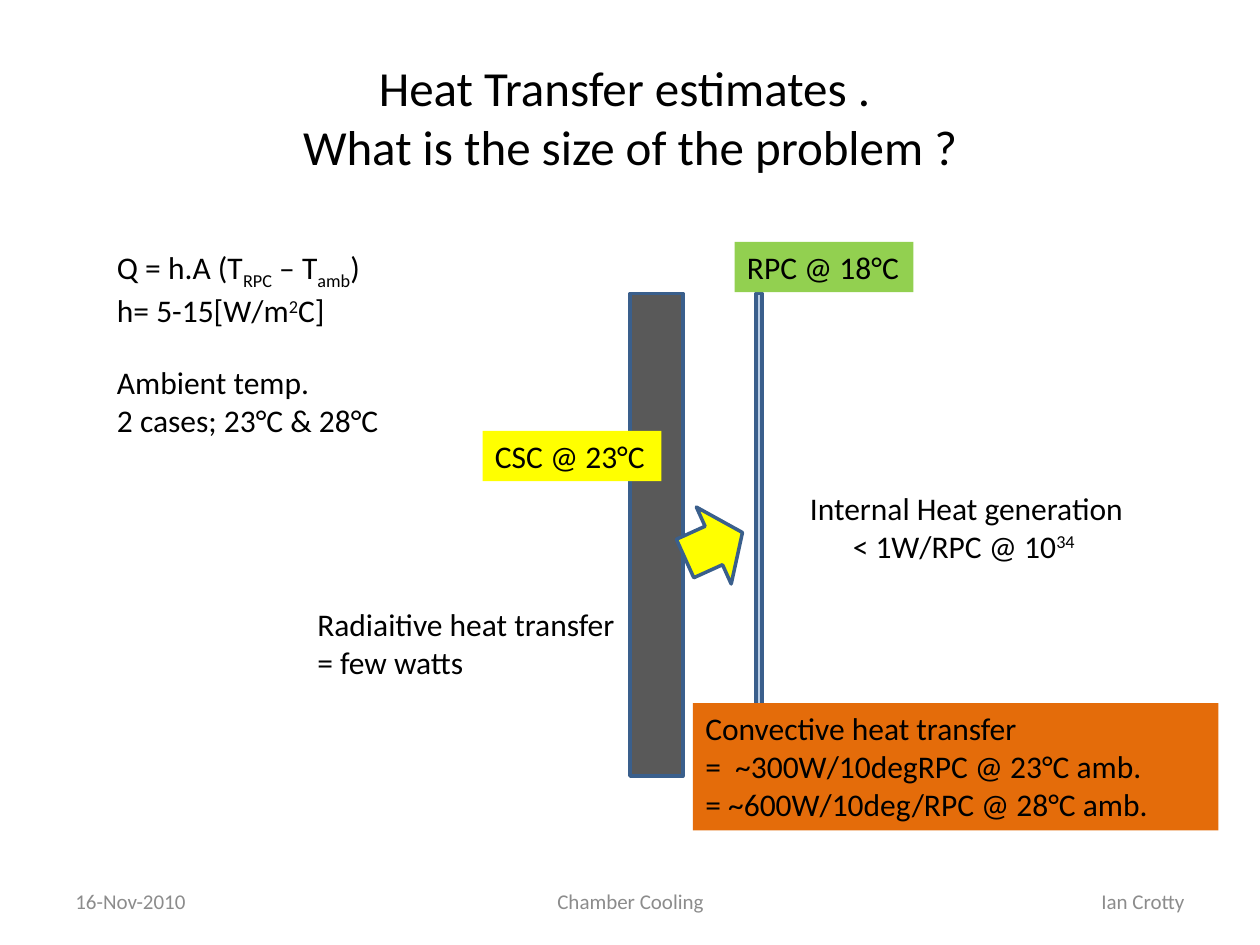
from pptx import Presentation
from pptx.dml.color import RGBColor
from pptx.enum.shapes import MSO_SHAPE
from pptx.enum.text import MSO_ANCHOR, PP_ALIGN
from pptx.util import Inches, Pt

LEFT, CENTER, RIGHT = PP_ALIGN.LEFT, PP_ALIGN.CENTER, PP_ALIGN.RIGHT
TOP, MIDDLE = MSO_ANCHOR.TOP, MSO_ANCHOR.MIDDLE
RECTANGLE, UP_ARROW = MSO_SHAPE.RECTANGLE, MSO_SHAPE.UP_ARROW

BLACK = RGBColor(0x00, 0x00, 0x00)
WHITE = RGBColor(0xFF, 0xFF, 0xFF)
FOOTER_GRAY = RGBColor(0x8C, 0x8C, 0x8C)
DARK_GRAY = RGBColor(0x59, 0x59, 0x59)
OUTLINE_BLUE = RGBColor(0x3A, 0x5F, 0x8C)
PALE_BLUE = RGBColor(0xB9, 0xCD, 0xE5)
GREEN = RGBColor(0x92, 0xD0, 0x50)
YELLOW = RGBColor(0xFF, 0xFF, 0x00)
ORANGE = RGBColor(0xE4, 0x6C, 0x0A)

SUBSCRIPT, SUPERSCRIPT = "-25000", "30000"


def add_text(box, lines, size=18, color=BLACK, alignment=LEFT, anchor=TOP, fill=None):
    """Add a text box; a line is a string or a list of (text, baseline) runs."""
    text_box = slide.shapes.add_textbox(*map(Inches, box))
    if fill is not None:
        text_box.fill.solid()
        text_box.fill.fore_color.rgb = fill
    frame = text_box.text_frame
    frame.word_wrap = True
    frame.vertical_anchor = anchor
    for index, line in enumerate(lines):
        paragraph = frame.add_paragraph() if index else frame.paragraphs[0]
        paragraph.alignment = alignment
        paragraph.font.name = "Calibri"
        paragraph.font.size = Pt(size)
        paragraph.font.color.rgb = color
        if isinstance(line, str):
            paragraph.text = line
            continue
        for text, baseline in line:
            run = paragraph.add_run()
            run.text = text
            if baseline:
                run.font._element.set("baseline", baseline)
    return text_box


def add_outlined_shape(kind, box, fill):
    shape = slide.shapes.add_shape(kind, *map(Inches, box))
    shape.shadow.inherit = False
    shape.fill.solid()
    shape.fill.fore_color.rgb = fill
    shape.line.color.rgb = OUTLINE_BLUE
    shape.line.width = Pt(2)
    return shape


presentation = Presentation()
presentation.slide_width = Inches(10)
presentation.slide_height = Inches(7.5)
slide = presentation.slides.add_slide(presentation.slide_layouts[6])

add_text((0.5, 0.3, 9, 1.25),
         ["Heat Transfer estimates . \vWhat is the size of the problem ?"],
         size=28, alignment=CENTER, anchor=MIDDLE)

for left, width, text, alignment in [
    (0.5, 2.33, "16-Nov-2010", LEFT),
    (3.42, 3.17, "Chamber Cooling", CENTER),
    (7.17, 2.33, "Ian Crotty", RIGHT),
]:
    add_text((left, 6.95, width, 0.4), [text], size=12, color=FOOTER_GRAY,
             alignment=alignment, anchor=MIDDLE)

# Chamber plates
add_outlined_shape(RECTANGLE, (5, 2.33, 0.42, 3.83), DARK_GRAY)
add_outlined_shape(RECTANGLE, (6, 2.33, 0.05, 3.83), PALE_BLUE)

# Temperatures and heat estimates
add_text((5.83, 1.92, 1.42, 0.4), ["RPC @ 18°C"], fill=GREEN)
add_text((3.83, 3.42, 1.42, 0.4), ["CSC @ 23°C"], fill=YELLOW)
add_text((2.42, 4.75, 2.67, 0.71), ["Radiaitive heat transfer", "= few watts"])
add_text((0.83, 2.83, 2.58, 0.71), ["Ambient temp.", "2 cases; 23°C & 28°C"])

internal_heat = add_text(
    (6.33, 3.83, 3.17, 0.71),
    ["Internal Heat generation", [("< 1W/RPC @ 10", None), ("34", SUPERSCRIPT)]],
    fill=WHITE)
rate_properties = internal_heat.text_frame.paragraphs[1]._p.get_or_add_pPr()
rate_properties.set("marL", str(Inches(0.34)))

add_text((5.5, 5.58, 4.17, 1.01),
         ["Convective heat transfer",
          "=  ~300W/10degRPC @ 23°C amb.",
          "= ~600W/10deg/RPC @ 28°C amb."],
         fill=ORANGE)
add_text((0.83, 1.92, 2.75, 0.71),
         [[("Q = h.A (T", None), ("RPC", SUBSCRIPT), (" – T", None),
           ("amb", SUBSCRIPT), (")", None)],
          [("h= 5-15[W/m", None), ("2", SUPERSCRIPT), ("C]", None)]])

heat_arrow = add_outlined_shape(UP_ARROW, (5.33, 4.08, 0.67, 0.5), YELLOW)
heat_arrow.rotation = 65.6

presentation.save("out.pptx")
